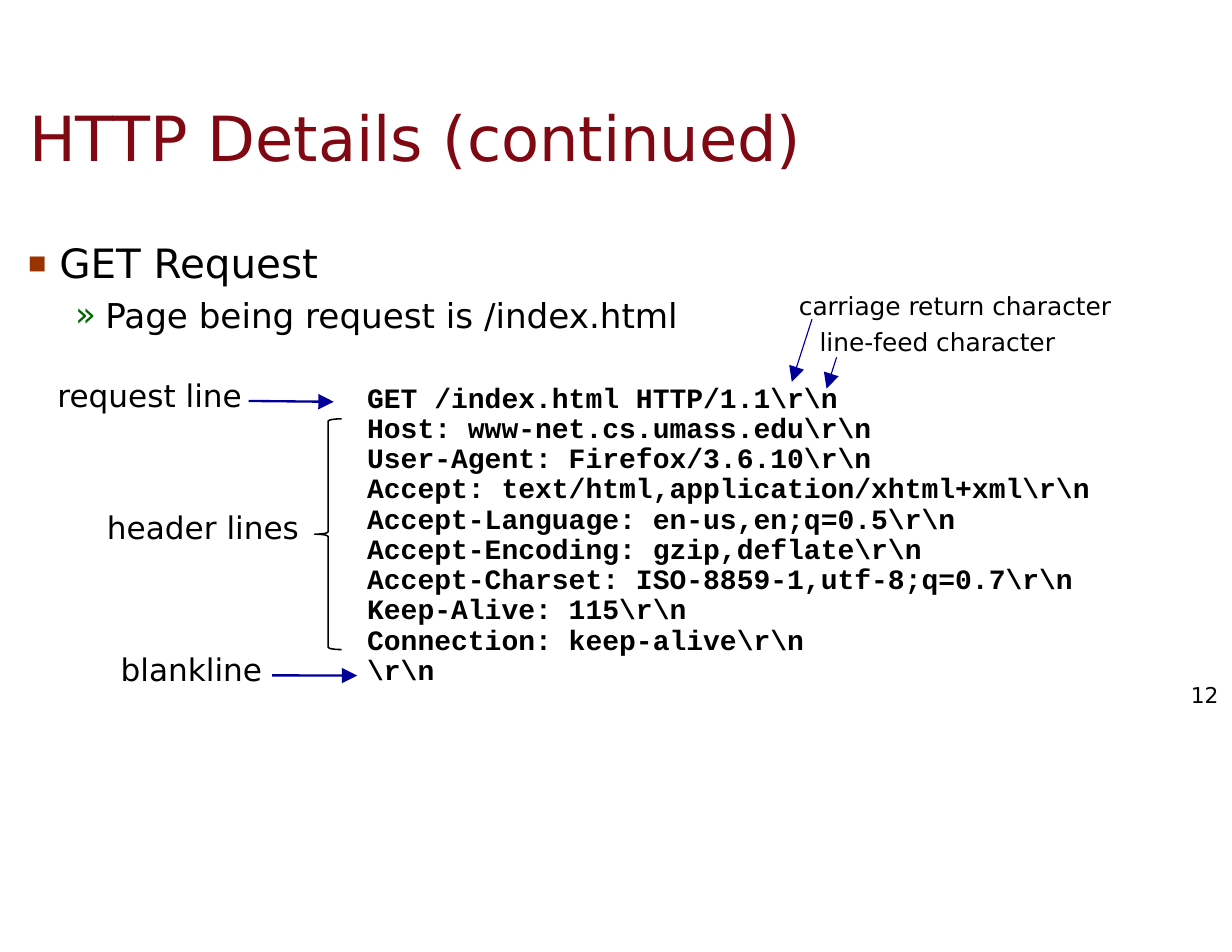
from lxml import etree
from pptx import Presentation
from pptx.dml.color import RGBColor
from pptx.enum.shapes import MSO_CONNECTOR as Connector, MSO_SHAPE as Shape
from pptx.enum.text import MSO_ANCHOR as Anchor, MSO_AUTO_SIZE as AutoSize, PP_ALIGN as Align
from pptx.oxml.ns import qn
from pptx.util import Pt

# Content: boxes are (left, top, width, height) in points
TITLE = "HTTP Details (continued)"
TITLE_BOX = (10.8, 50.4, 758.16, 74.88)
BODY_BOX = (0, 149.04, 790.56, 416.16)
# text, size, left margin, hanging indent, space before, bullet, bullet colour, bullet percent
BULLETS = [
    ("GET Request", "body", 30.24, 20.16, 0, "■", "bullet", 48),
    ("Page being request is /index.html", "sub", 59.76, 19.44, 4.4, "»", "sub_bullet", 100),
]
REQUEST = [
    r"GET /index.html HTTP/1.1\r\n",
    r"Host: www-net.cs.umass.edu\r\n",
    r"User-Agent: Firefox/3.6.10\r\n",
    r"Accept: text/html,application/xhtml+xml\r\n",
    r"Accept-Language: en-us,en;q=0.5\r\n",
    r"Accept-Encoding: gzip,deflate\r\n",
    r"Accept-Charset: ISO-8859-1,utf-8;q=0.7\r\n",
    r"Keep-Alive: 115\r\n",
    r"Connection: keep-alive\r\n",
    r"\r\n",
]
REQUEST_BOX = (228.96, 243.36, 506.88, 203.76)
LABELS = [
    ("request line", "label", (28.8, 238.32, 133.92, 31.68)),
    ("header lines", "label", (45.36, 323.28, 154.08, 31.68)),
    ("blankline", "label", (65.68, 414.72, 110, 31.68)),
    ("carriage return character", "note", (503.5, 183.2, 218.16, 26.64)),
    ("line-feed character", "note", (518.4, 206.64, 167.04, 26.64)),
]
# start x, start y, end x, end y, line width
ARROWS = [
    (159.84, 257.76, 214.56, 258.3, 1.5),
    (174.96, 434.16, 229.68, 434.3, 1.5),
    (522, 205.2, 509.04, 245.52, 0.75),
    (537.84, 229.68, 531.36, 249.84, 0.75),
]
BRACE_BOX = (202.32, 269.28, 17.28, 148.32)
PAGE_NUMBER = "12"
NUMBER_BOX = (758.88, 437.76, 24.48, 17.28)

THEME = {
    "font": "DejaVu Sans",
    "code_font": "Courier New",
    "sizes": {"title": 40, "body": 26, "sub": 22, "label": 20,
              "code": 18, "note": 16, "number": 14},
    "colors": {"title": "7F0813", "text": "000000", "arrow": "000099",
               "bullet": "993300", "sub_bullet": "006600"},
}


def color(name):
    return RGBColor.from_string(THEME["colors"][name])


def points(values):
    return [Pt(value) for value in values]


def style(para, size, ink="text", font="font", bold=False):
    for span in para.runs:
        span.font.name = THEME[font]
        span.font.size = Pt(THEME["sizes"][size])
        span.font.bold = bold
        span.font.color.rgb = color(ink)


def set_insets(frame, side, end):
    frame.margin_left = frame.margin_right = Pt(side)
    frame.margin_top = frame.margin_bottom = Pt(end)


def add_text(page, bounds, text, wrap=True):
    frame = page.shapes.add_textbox(*points(bounds)).text_frame
    frame.word_wrap = wrap
    if not wrap:
        frame.auto_size = AutoSize.SHAPE_TO_FIT_TEXT
    frame.text = text
    return frame


def set_indent(para, margin, hanging):
    props = para._p.get_or_add_pPr()
    props.set("marL", str(Pt(margin)))
    props.set("indent", str(-Pt(hanging)))
    return props


def add_bullet(para, margin, hanging, char, ink, percent):
    props = set_indent(para, margin, hanging)
    tint = etree.SubElement(props, qn("a:buClr"))
    etree.SubElement(tint, qn("a:srgbClr"), val=THEME["colors"][ink])
    etree.SubElement(props, qn("a:buSzPct"), val=str(percent * 1000))
    etree.SubElement(props, qn("a:buFont"), typeface=THEME["font"])
    etree.SubElement(props, qn("a:buChar"), char=char)


def add_arrow(page, x1, y1, x2, y2, width):
    arrow = page.shapes.add_connector(Connector.STRAIGHT, *points((x1, y1, x2, y2)))
    arrow.line.color.rgb = color("arrow")
    arrow.line.width = Pt(width)
    etree.SubElement(arrow.line._get_or_add_ln(), qn("a:tailEnd"),
                     type="triangle", w="lg", len="lg")
    etree.SubElement(arrow._element.spPr, qn("a:effectLst"))


def main():
    deck = Presentation()
    deck.slide_width, deck.slide_height = Pt(792), Pt(612)
    page = deck.slides.add_slide(deck.slide_layouts[5])

    # Title
    title = page.shapes.title
    title.left, title.top, title.width, title.height = points(TITLE_BOX)
    frame = title.text_frame
    frame.text = TITLE
    frame.vertical_anchor = Anchor.MIDDLE
    set_insets(frame, 7.92, 4.32)
    frame.paragraphs[0].alignment = Align.LEFT
    style(frame.paragraphs[0], "title", "title")

    # Bulleted introduction
    frame = add_text(page, BODY_BOX, "\n".join(item[0] for item in BULLETS))
    set_insets(frame, 7.92, 4.32)
    for para, item in zip(frame.paragraphs, BULLETS):
        _, size, margin, hanging, before, char, ink, percent = item
        para.space_before = Pt(before)
        add_bullet(para, margin, hanging, char, ink, percent)
        style(para, size)

    # Request listing
    frame = add_text(page, REQUEST_BOX, "\n".join(REQUEST))
    for para in frame.paragraphs:
        para.line_spacing = 0.9
        set_indent(para, 27, 27)
        style(para, "code", font="code_font", bold=True)

    # Labels, arrows and the brace around the header lines
    for text, size, bounds in LABELS:
        para = add_text(page, bounds, text, wrap=False).paragraphs[0]
        para.alignment = Align.RIGHT
        style(para, size)
    for arrow in ARROWS:
        add_arrow(page, *arrow)
    brace = page.shapes.add_shape(Shape.LEFT_BRACE, *points(BRACE_BOX))
    brace.shadow.inherit = False
    brace.fill.background()
    brace.line.color.rgb = color("text")
    brace.line.width = Pt(1)

    # Page number
    frame = add_text(page, NUMBER_BOX, PAGE_NUMBER, wrap=False)
    set_insets(frame, 0, 0)
    frame.vertical_anchor = Anchor.MIDDLE
    frame.paragraphs[0].alignment = Align.RIGHT
    style(frame.paragraphs[0], "number")

    deck.save("out.pptx")


if __name__ == "__main__":
    main()
